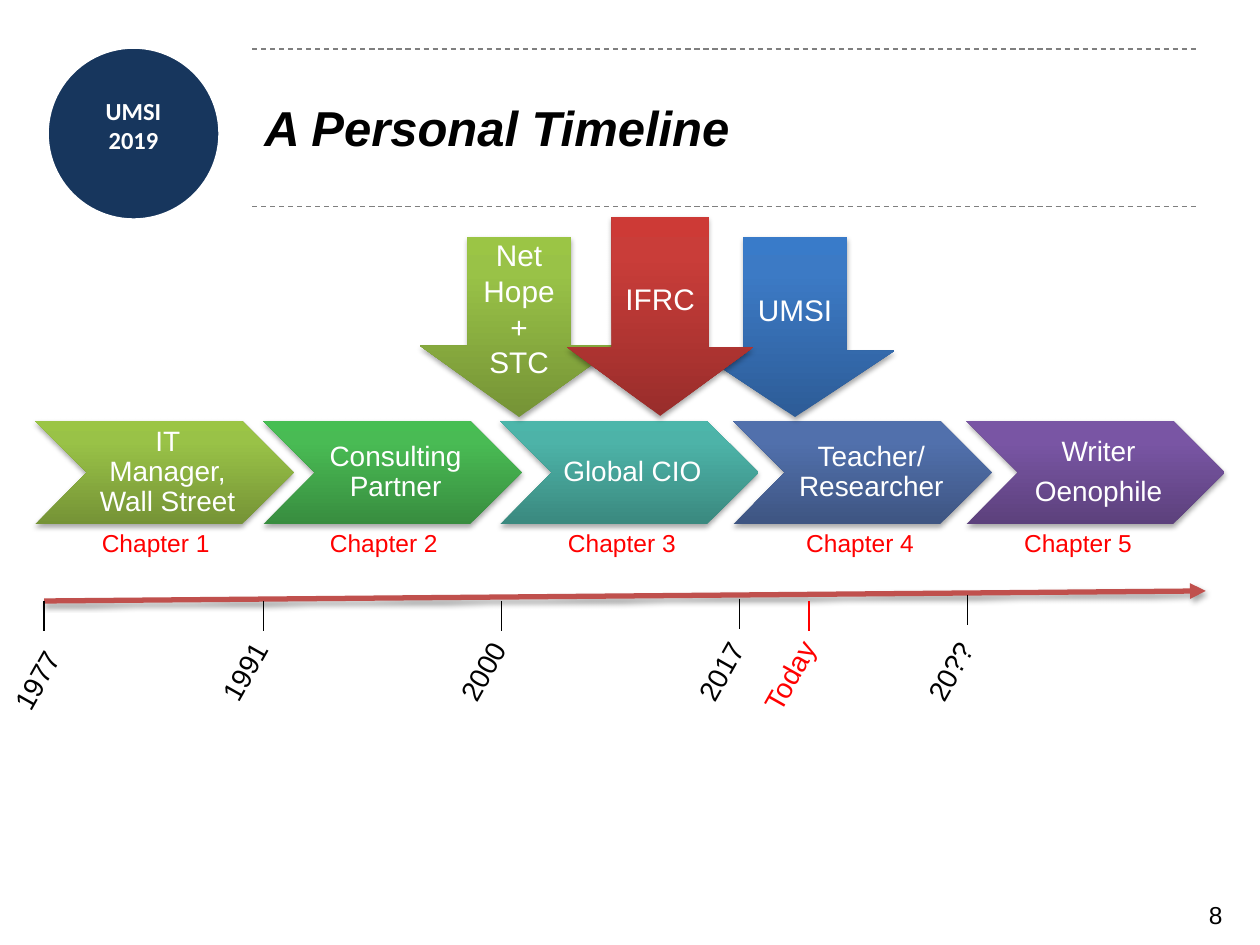
from copy import deepcopy

from lxml import etree
from pptx import Presentation
from pptx.dml.color import RGBColor
from pptx.enum.dml import MSO_LINE
from pptx.enum.shapes import MSO_CONNECTOR, MSO_SHAPE
from pptx.enum.text import MSO_ANCHOR, PP_ALIGN
from pptx.oxml.ns import qn
from pptx.util import Emu, Pt

PX = 9144  # 100 px to the inch
LEFT, CENTER, RIGHT = PP_ALIGN.LEFT, PP_ALIGN.CENTER, PP_ALIGN.RIGHT
TOP, MIDDLE = MSO_ANCHOR.TOP, MSO_ANCHOR.MIDDLE
STRAIGHT = MSO_CONNECTOR.STRAIGHT
DASH = MSO_LINE.DASH
OVAL, CHEVRON, DOWN_ARROW = MSO_SHAPE.OVAL, MSO_SHAPE.CHEVRON, MSO_SHAPE.DOWN_ARROW

COLORS = {
    "navy": "17365D", "white": "FFFFFF", "black": "000000",
    "red": "FF0000", "rule": "7F7F7F", "axis": "C0504D",
}
GRADIENTS = {
    "olive": ("759336", "99C247", "9BC545"),
    "green": ("388D3F", "49BB54", "47BE53"),
    "teal": ("3A897F", "4DB3A8", "4CB6AA"),
    "indigo": ("3E5582", "5170AC", "506FAF"),
    "purple": ("5C417C", "7955A4", "7955A6"),
    "blue": ("2D5C97", "3C7AC5", "397BC9"),
    "crimson": ("992D2B", "C93D39", "CD3A36"),
}
STOPS = (0, 0.8, 1)

# chevron left, text, gradient, text inset, text width, chapter label left
CHAPTERS = [
    (28, "IT Manager, Wall Street", "olive", 41, 123, 71),
    (209, "Consulting Partner", "green", 41, 123, 252),
    (397, "Global CIO", "teal", 41, 123, 441),
    (582, "Teacher/ Researcher", "indigo", 25, 164, 630),
    (767, "Writer\nOenophile", "purple", 41, 123, 803),
]
# label, tick left and top, label box, color, tick weight
DATES = [
    ("1977", 35, 477, (-8, 517, 79, 37), "black", 0.75),
    ("1991", 209, 477, (157, 510, 79, 37), "black", 0.75),
    ("2000", 398, 477, (346, 510, 79, 37), "black", 0.75),
    ("2017", 587, 475, (535, 510, 79, 37), "black", 0.75),
    ("Today", 642, 477, (585, 514, 87, 37), "red", 1),
    ("20??", 768, 472, (717, 510, 79, 37), "black", 0.75),
]
# box, text, gradient, head length
ROLES = [
    ((552, 188, 158, 143), "UMSI", "blue", 0.368),
    ((333, 188, 158, 143), "Net Hope+\nSTC", "olive", 0.397),
    ((450, 172, 148, 158), "IFRC", "crimson", 0.368),
]


def emu(lengths):
    return [Emu(length * PX) for length in lengths]


def rgb(name):
    return RGBColor.from_string(COLORS[name])


def write(shape, text, size, color="black", align=LEFT, anchor=TOP,
          insets=(10, 5, 10, 5), font="Arial", bold=False, italic=False,
          wrap=True, line_spacing=None, gap=0):
    """Fill a shape with text; gap is the space in points between paragraphs."""
    frame = shape.text_frame
    frame.text = text
    frame.word_wrap = wrap
    frame.vertical_anchor = anchor
    (frame.margin_left, frame.margin_top,
     frame.margin_right, frame.margin_bottom) = emu(insets)
    for index, paragraph in enumerate(frame.paragraphs):
        paragraph.alignment = align
        if line_spacing:
            paragraph.line_spacing = line_spacing
        if index and gap:
            paragraph.space_before = Pt(gap)
        for run in paragraph.runs:
            run.font.name, run.font.size = font, Pt(size)
            run.font.bold, run.font.italic = bold, italic
            run.font.color.rgb = rgb(color)


def add_text(slide, box, text, size, **style):
    label = slide.shapes.add_textbox(*emu(box))
    write(label, text, size, **style)
    return label


def add_effects(shape, shadow=False):
    """Replace the theme effects by a soft drop shadow or by nothing."""
    effects = etree.SubElement(shape._element.spPr, qn("a:effectLst"))
    if shadow:
        outer = etree.SubElement(effects, qn("a:outerShdw"), blurRad=str(Pt(3.1)),
                                 dist=str(Pt(1.8)), dir="5400000", rotWithShape="0")
        black = etree.SubElement(outer, qn("a:srgbClr"), val=COLORS["black"])
        etree.SubElement(black, qn("a:alpha"), val="35000")


def add_line(slide, start, end, color, weight, dash=None, arrow=False, shadow=False):
    line = slide.shapes.add_connector(STRAIGHT, *emu(start + end))
    line.line.color.rgb = rgb(color)
    line.line.width = Pt(weight)
    if dash:
        line.line.dash_style = dash
    if arrow:
        etree.SubElement(line.line._get_or_add_ln(), qn("a:tailEnd"), type="triangle")
    add_effects(line, shadow)


def add_gradient_shape(slide, kind, box, gradient, adjustments):
    shape = slide.shapes.add_shape(kind, *emu(box))
    for index, value in enumerate(adjustments):
        shape.adjustments[index] = value
    shape.fill.gradient()
    shape.fill.gradient_angle = 90
    stop_list = shape._element.spPr.find(".//" + qn("a:gsLst"))
    stop_list.insert(1, deepcopy(stop_list[0]))
    for stop, position, color in zip(shape.fill.gradient_stops, STOPS, GRADIENTS[gradient]):
        stop.position = position
        stop.color.rgb = RGBColor.from_string(color)
    shape.line.fill.background()
    add_effects(shape, shadow=True)
    return shape


def add_badge(slide, left, top, size):
    disc = slide.shapes.add_shape(OVAL, *emu((left, top, size, size)))
    disc.shadow.inherit = False
    disc.fill.solid()
    disc.fill.fore_color.rgb = rgb("navy")
    disc.line.color.rgb = rgb("white")
    disc.line.width = Pt(2.5)
    add_text(slide, (left + 6, top + 39, size - 12, 47), "UMSI\n2019", 14, color="white",
             align=CENTER, insets=(0, 0, 0, 0), font="Calibri", bold=True)


def add_title(slide, left, top, width, height):
    for y in (top, top + height):
        add_line(slide, (left, y), (left + width, y), "rule", 0.75, dash=DASH)
    add_text(slide, (left, top - 1, width, height), "A Personal Timeline", 28,
             anchor=MIDDLE, bold=True, italic=True)


def add_chapters(slide, top, width, height):
    for number, (left, text, gradient, inset, text_width, label_left) in enumerate(CHAPTERS, 1):
        add_gradient_shape(slide, CHEVRON, (left, top, width, height), gradient, [0.5])
        add_text(slide, (left + inset, top, text_width, height), text, 16, color="white",
                 align=CENTER, anchor=MIDDLE, insets=(7, 2, 2, 2), line_spacing=0.9, gap=5.6)
        add_text(slide, (label_left, top + height - 2, 106, 34), f"Chapter {number}", 14,
                 color="red", wrap=False)


def add_time_axis(slide, start, end, tick_length):
    add_line(slide, start, end, "axis", 3, arrow=True, shadow=True)
    for text, x, y, box, color, weight in DATES:
        add_line(slide, (x, y), (x, y + tick_length), color, weight)
        label = add_text(slide, box, text, 16, color=color, wrap=False)
        label.rotation = 299.4


def add_roles(slide):
    for box, text, gradient, head in ROLES:
        arrow = add_gradient_shape(slide, DOWN_ARROW, box, gradient, [0.519, head])
        write(arrow, text, 17, color="white", align=CENTER, anchor=MIDDLE)


def main():
    deck = Presentation()
    deck.slide_width, deck.slide_height = emu((1000, 750))
    slide = deck.slides.add_slide(deck.slide_layouts[6])
    add_badge(slide, 37, 37, 138)
    add_title(slide, 200, 39, 750, 125)
    add_chapters(slide, 334, 205, 82)
    add_time_axis(slide, (35, 477), (957, 469), 24)
    add_roles(slide)
    add_text(slide, (847, 709, 133, 41), "8", 14, align=RIGHT)
    deck.save("out.pptx")


if __name__ == "__main__":
    main()
